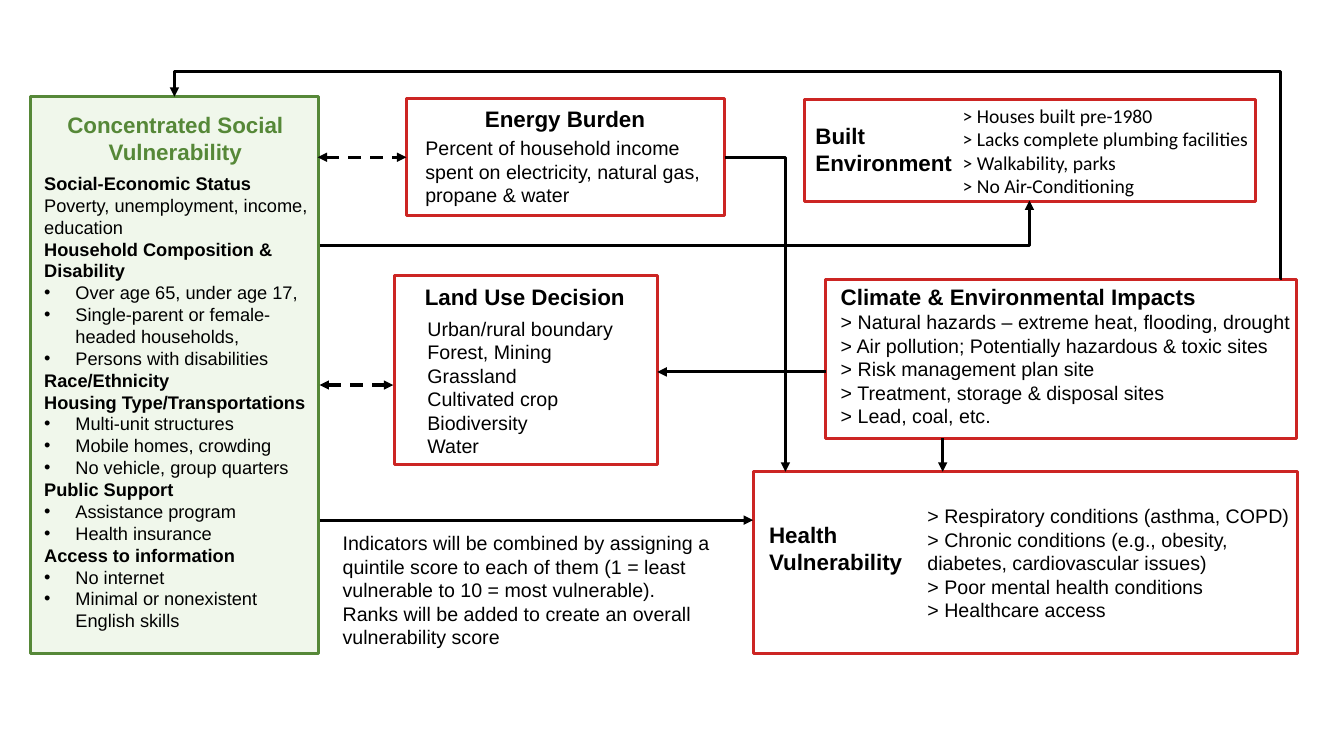
"""Build a slide on how social vulnerability links to energy, land, climate and health."""
from dataclasses import dataclass
from typing import Optional

from lxml.etree import SubElement
from pptx import Presentation
from pptx.dml.color import RGBColor
from pptx.enum.dml import MSO_LINE as Dash
from pptx.enum.shapes import MSO_CONNECTOR as Joint, MSO_SHAPE as Form
from pptx.enum.text import MSO_ANCHOR as Anchor, PP_ALIGN as Align
from pptx.oxml.ns import qn
from pptx.util import Inches, Pt

BLACK = RGBColor(0x00, 0x00, 0x00)
RED = RGBColor(0xCC, 0x25, 0x23)
GREEN = RGBColor(0x56, 0x88, 0x38)
PALE = RGBColor(0xE2, 0xF0, 0xD9)
WIDTH = Pt(2.25)


@dataclass
class Box:
    name: str
    at: tuple
    line: RGBColor = RED
    fill: Optional[RGBColor] = None


@dataclass
class Row:
    text: str
    bold: bool = False
    size: float = 14
    dot: bool = False


@dataclass
class Label:
    at: tuple
    rows: list
    color: RGBColor = BLACK
    font: str = "Arial"
    center: bool = False
    wrap: bool = True


@dataclass
class Arrow:
    start: tuple
    end: tuple
    head: bool = False
    tail: bool = True
    dash: bool = False
    bend: str = ""
    turn: int = 0
    adjust: tuple = ()
    goal: str = ""
    side: int = 0


def title(*lines: str) -> list:
    """Make large bold rows."""
    return [Row(line, True, 16) for line in lines]


def plain(*lines: str) -> list:
    """Make plain rows."""
    return [Row(line) for line in lines]


def theme(head: str, *dots: str) -> list:
    """Make a bold row and its bulleted rows."""
    return [Row(head, True, 13)] + [Row(text, size=13, dot=True) for text in dots]


BOXES = [
    Box("social", (0.3, 0.96, 2.86, 5.52), GREEN, PALE),
    Box("energy", (4.03, 0.98, 3.16, 1.16)),
    Box("built", (7.98, 0.99, 4.47, 1.01)),
    Box("land", (3.91, 2.73, 2.61, 1.88)),
    Box("climate", (8.19, 2.77, 4.67, 1.58)),
    Box("health", (7.47, 4.68, 5.4, 1.8)),
]

THEMES = [
    *theme("Social-Economic Status"),
    Row("Poverty, unemployment, income, education", size=13),
    *theme("Household Composition & Disability", "Over age 65, under age 17,",
           "Single-parent or female-headed households,", "Persons with disabilities"),
    *theme("Race/Ethnicity"),
    *theme("Housing Type/Transportations", "Multi-unit structures",
           "Mobile homes, crowding", "No vehicle, group quarters"),
    *theme("Public Support", "Assistance program", "Health insurance"),
    *theme("Access to information", "No internet",
           "Minimal or nonexistent English skills"),
]

LABELS = [
    Label((0.31, 1.05, 2.86, 0.64), title("Concentrated Social Vulnerability"),
          GREEN, center=True),
    Label((0.34, 1.66, 2.81, 4.7), THEMES),
    Label((4.02, 0.99, 3.17, 0.38), title("Energy Burden"), center=True),
    Label((4.12, 1.3, 3.06, 0.81), plain(
        "Percent of household income spent on electricity, natural gas, propane & water")),
    Label((7.99, 1.16, 1.57, 0.64), title("Built", "Environment"), wrap=False),
    Label((9.45, 0.98, 3.17, 1.04), plain(
        "> Houses built pre-1980", "> Lacks complete plumbing facilities",
        "> Walkability, parks", "> No Air-Conditioning"), font="Calibri"),
    Label((3.9, 2.76, 2.61, 0.38), title("Land Use Decision"), center=True),
    Label((4.14, 3.09, 2.25, 1.51), plain(
        "Urban/rural boundary", "Forest, Mining", "Grassland",
        "Cultivated crop", "Biodiversity", "Water")),
    Label((8.24, 2.76, 4.79, 1.55), title("Climate & Environmental Impacts") + plain(
        "> Natural hazards – extreme heat, flooding, drought",
        "> Air pollution; Potentially hazardous & toxic sites",
        "> Risk management plan site", "> Treatment, storage & disposal sites",
        "> Lead, coal, etc.")),
    Label((7.53, 5.12, 1.54, 0.66), title("Health", "Vulnerability"), wrap=False),
    Label((9.1, 4.95, 3.8, 1.28), plain(
        "> Respiratory conditions (asthma, COPD)",
        "> Chronic conditions (e.g., obesity, diabetes, cardiovascular issues)",
        "> Poor mental health conditions", "> Healthcare access")),
    Label((3.3, 5.22, 3.9, 1.31), plain(
        "Indicators will be combined by assigning a quintile score to each of them "
        "(1 = least vulnerable to 10 = most vulnerable). Ranks will be added to create "
        "an overall vulnerability score")),
]

ARROWS = [
    Arrow((3.15, 1.56), (4.03, 1.56), head=True, dash=True, goal="energy", side=1),
    Arrow((3.17, 3.82), (3.9, 3.82), head=True, dash=True),
    Arrow((3.17, 5.16), (7.47, 5.16)),
    Arrow((9.35, 4.35), (9.35, 4.68)),
    Arrow((8.19, 3.69), (6.52, 3.69)),
    Arrow((7.19, 1.56), (7.79, 4.68), bend="bentConnector2"),
    Arrow((3.17, 2.44), (10.21, 1.99), bend="bentConnector2"),
    Arrow((8.12, -3.63), (6.32, 7.35), head=True, tail=False,
          bend="bentConnector4", turn=270, adjust=(-13900, 99900)),
]


def draw_box(shapes, box: Box):
    """Draw one framed box."""
    shape = shapes.add_shape(Form.RECTANGLE, *map(Inches, box.at))
    shape.shadow.inherit = False
    shape.line.color.rgb = box.line
    shape.line.width = WIDTH
    if box.fill is None:
        shape.fill.background()
    else:
        shape.fill.solid()
        shape.fill.fore_color.rgb = box.fill
        tint = next(shape.element.spPr.iter(qn("a:srgbClr")))
        SubElement(tint, qn("a:alpha"), val="50000")
    return shape


def draw_label(shapes, label: Label) -> None:
    """Write one block of text."""
    frame = shapes.add_textbox(*map(Inches, label.at)).text_frame
    frame.word_wrap = label.wrap
    frame.vertical_anchor = Anchor.TOP
    for i, row in enumerate(label.rows):
        para = frame.add_paragraph() if i else frame.paragraphs[0]
        para.text = row.text
        para.alignment = Align.CENTER if label.center else Align.LEFT
        if row.dot:
            props = para._p.get_or_add_pPr()
            props.set("marL", str(Inches(0.31)))
            props.set("indent", str(Inches(-0.31)))
            SubElement(props, qn("a:buFont"), typeface="Arial")
            SubElement(props, qn("a:buChar"), char="•")
        font = para.font
        font.name, font.size, font.bold = label.font, Pt(row.size), row.bold
        font.color.rgb = label.color


def draw_arrow(shapes, arrow: Arrow, boxes: dict) -> None:
    """Draw one straight or bent arrow."""
    kind = Joint.ELBOW if arrow.bend else Joint.STRAIGHT
    link = shapes.add_connector(kind, *map(Inches, arrow.start + arrow.end))
    if arrow.goal:
        link.end_connect(boxes[arrow.goal], arrow.side)
    props = link.element.spPr
    if arrow.bend:
        shape = props.find(qn("a:prstGeom"))
        shape.set("prst", arrow.bend)
        guides = shape.find(qn("a:avLst"))
        for i, value in enumerate(arrow.adjust, 1):
            SubElement(guides, qn("a:gd"), name=f"adj{i}", fmla=f"val {value}")
    if arrow.turn:
        props.find(qn("a:xfrm")).set("rot", str(arrow.turn * 60000))
    link.line.color.rgb = BLACK
    link.line.width = WIDTH
    if arrow.dash:
        link.line.dash_style = Dash.DASH
    pen = link.get_or_add_ln()
    for tag, shown in (("a:headEnd", arrow.head), ("a:tailEnd", arrow.tail)):
        if shown:
            SubElement(pen, qn(tag), type="triangle")
    SubElement(props, qn("a:effectLst"))


def main() -> None:
    """Build and save the slide."""
    deck = Presentation()
    deck.slide_width, deck.slide_height = Inches(13.33), Inches(7.5)
    shapes = deck.slides.add_slide(deck.slide_layouts[6]).shapes
    boxes = {box.name: draw_box(shapes, box) for box in BOXES}
    for label in LABELS:
        draw_label(shapes, label)
    for arrow in ARROWS:
        draw_arrow(shapes, arrow, boxes)
    deck.save("out.pptx")


if __name__ == "__main__":
    main()
